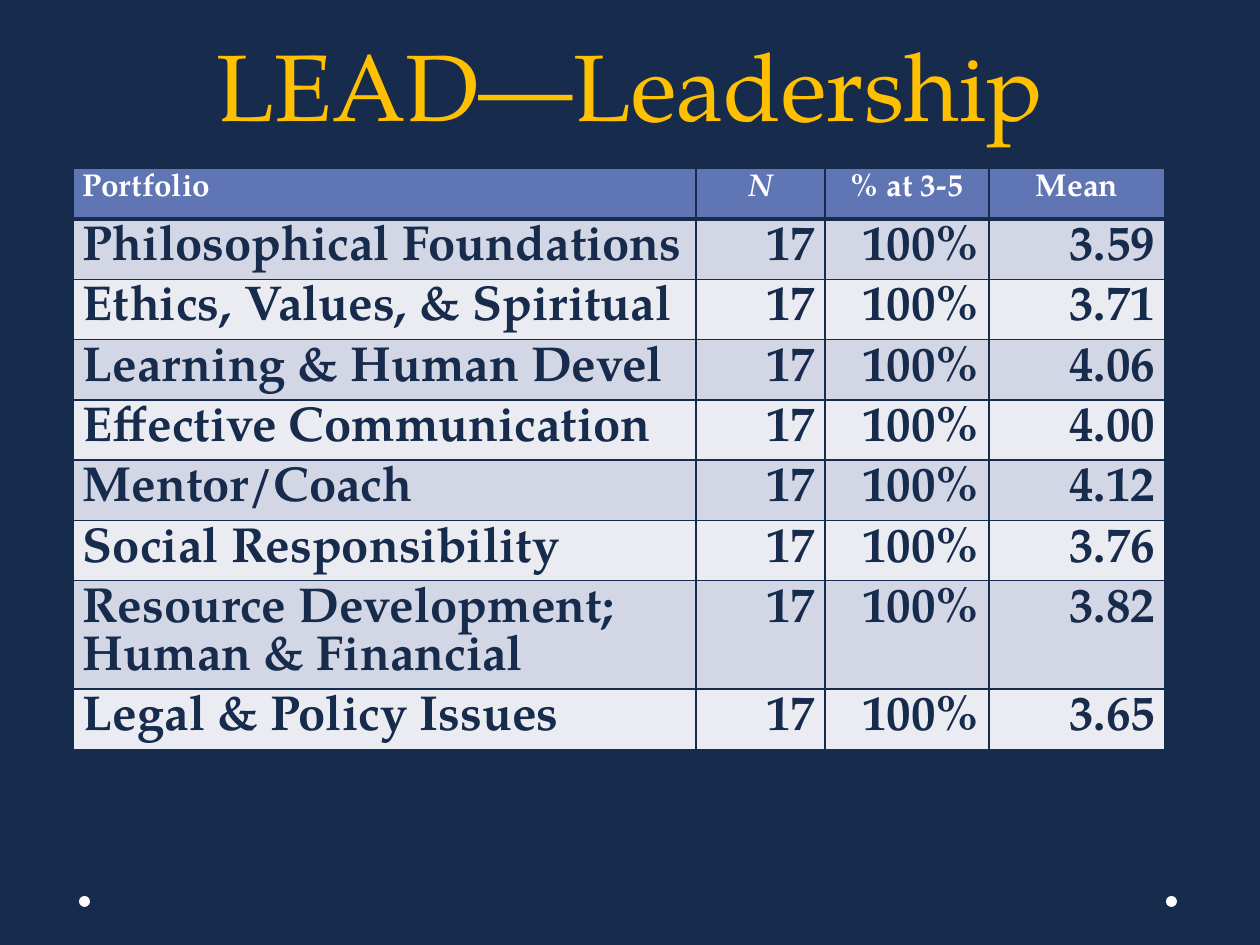
from dataclasses import dataclass

from lxml.etree import SubElement
from pptx import Presentation
from pptx.dml.color import RGBColor
from pptx.enum.shapes import MSO_SHAPE
from pptx.enum.text import MSO_ANCHOR, PP_ALIGN
from pptx.oxml.ns import qn
from pptx.util import Emu, Pt


@dataclass(frozen=True)
class Theme:
    font: str = "TeX Gyre Pagella"
    navy: str = "172B4C"
    gold: str = "FFC000"
    white: str = "FFFFFF"
    header: str = "6076B4"
    bands: tuple = ("D2D6E5", "EAECF2")
    title_size: int = 54
    title_leading: int = 58
    header_size: int = 18
    body_size: int = 28
    body_leading: float = 27.6


THEME = Theme()
PX_PER_INCH = 126
HEADERS = ("Portfolio", "N", "% at 3-5", "Mean")
MEANS = (
    ("Philosophical Foundations", "3.59"),
    ("Ethics, Values, & Spiritual", "3.71"),
    ("Learning & Human Devel", "4.06"),
    ("Effective Communication", "4.00"),
    ("Mentor/Coach", "4.12"),
    ("Social Responsibility", "3.76"),
    ("Resource Development; Human & Financial", "3.82"),
    ("Legal & Policy Issues", "3.65"),
)
COL_WIDTHS = (623, 129, 164, 176)
ROW_HEIGHT = 51


def px(n):
    return Emu(round(n * 914400 / PX_PER_INCH))


def rgb(color):
    return RGBColor.from_string(color)


def add_run(p, text, size, color, bold=False, italic=False):
    r = p.add_run()
    r.text = text
    r.font.name = THEME.font
    r.font.size = Pt(size)
    r.font.bold = bold
    r.font.italic = italic
    r.font.color.rgb = rgb(color)


def add_title(s, text):
    tf = s.shapes.add_textbox(px(63), px(0), px(1134), px(147)).text_frame
    tf.word_wrap = True
    tf.vertical_anchor = MSO_ANCHOR.BOTTOM
    p = tf.paragraphs[0]
    p.alignment = PP_ALIGN.CENTER
    p.line_spacing = Pt(THEME.title_leading)
    add_run(p, text, THEME.title_size, THEME.gold)


def add_dot(s, x):
    dot = s.shapes.add_shape(MSO_SHAPE.OVAL, px(x), px(896), px(11), px(11))
    dot.shadow.inherit = False
    dot.fill.solid()
    dot.fill.fore_color.rgb = rgb(THEME.white)
    dot.line.fill.background()


def set_borders(cell, top, bottom):
    tc_pr = cell._tc.get_or_add_tcPr()
    for side, width in (("L", 1), ("R", 1), ("T", top), ("B", bottom)):
        ln = SubElement(tc_pr, qn(f"a:ln{side}"), w=str(Pt(width)))
        fill = SubElement(ln, qn("a:solidFill"))
        SubElement(fill, qn("a:srgbClr"), val=THEME.navy)


def fill_cell(cell, text, row, col):
    is_header = row == 0
    set_borders(cell, top=3 if row == 1 else 1, bottom=3 if is_header else 1)
    cell.fill.solid()
    cell.fill.fore_color.rgb = rgb(THEME.header if is_header else THEME.bands[(row - 1) % 2])
    cell.margin_left = cell.margin_right = px(10)
    cell.margin_top = cell.margin_bottom = px(6)
    p = cell.text_frame.paragraphs[0]
    if col == 0:
        p.alignment = PP_ALIGN.LEFT
    else:
        p.alignment = PP_ALIGN.CENTER if is_header else PP_ALIGN.RIGHT
    if not is_header:
        p.line_spacing = Pt(THEME.body_leading)
    size = THEME.header_size if is_header else THEME.body_size
    color = THEME.white if is_header else THEME.navy
    add_run(p, text, size, color, bold=True, italic=text == "N")


def add_score_table(s, rows):
    table = s.shapes.add_table(
        len(rows), len(COL_WIDTHS), px(73), px(168),
        px(sum(COL_WIDTHS)), px(ROW_HEIGHT * len(rows)),
    ).table
    for column, width in zip(table.columns, COL_WIDTHS):
        column.width = px(width)
    for i, values in enumerate(rows):
        table.rows[i].height = px(ROW_HEIGHT)
        for j, text in enumerate(values):
            fill_cell(table.cell(i, j), text, i, j)


def main():
    prs = Presentation()
    prs.slide_width, prs.slide_height = px(1260), px(945)
    s = prs.slides.add_slide(prs.slide_layouts[6])
    s.background.fill.solid()
    s.background.fill.fore_color.rgb = rgb(THEME.navy)
    for x in (1166, 79):
        add_dot(s, x)
    add_title(s, "LEAD—Leadership")
    add_score_table(s, [HEADERS] + [(name, "17", "100%", mean) for name, mean in MEANS])
    prs.save("out.pptx")


if __name__ == "__main__":
    main()
